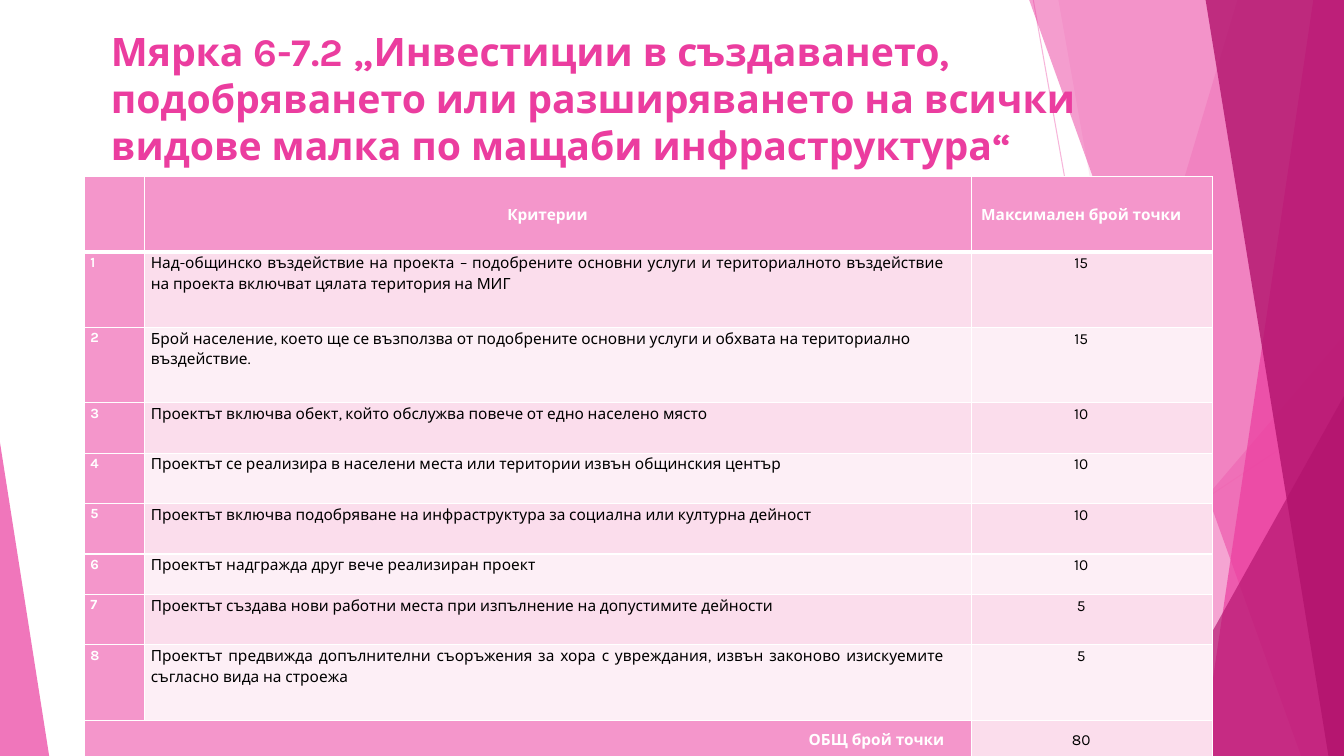
from lxml.etree import SubElement
from pptx import Presentation
from pptx.dml.color import RGBColor
from pptx.enum.shapes import MSO_CONNECTOR, MSO_SHAPE
from pptx.enum.text import MSO_ANCHOR, MSO_AUTO_SIZE, PP_ALIGN
from pptx.oxml.ns import qn
from pptx.util import Cm, Pt

WIDTH, HEIGHT = 33.87, 19.05
FONT = "Karla"
PINK, HOT_PINK, MAGENTA = "F496CB", "EB3D9F", "B2136D"
WHITE, BLACK = "FFFFFF", "000000"
BANDS = ["FBDDEC", "FDEFF6"]

TITLE = ("Мярка 6-7.2 „Инвестиции в създаването, подобряването или "
         "разширяването на всички видове малка по мащаби инфраструктура“")
HEADINGS = ["Критерии", "Максимален брой точки"]
CRITERIA = [
    ("Над-общинско въздействие на проекта – подобрените основни услуги и "
     "териториалното въздействие на проекта включват цялата територия на МИГ", 15, 1.9),
    ("Брой население, което ще се възползва от подобрените основни услуги и "
     "обхвата на териториално въздействие.", 15, 1.9),
    ("Проектът включва обект, който обслужва повече от едно населено място", 10, 1.27),
    ("Проектът се реализира в населени места или територии извън общинския център", 10, 1.27),
    ("Проектът включва подобряване на инфраструктура за социална или културна дейност", 10, 1.27),
    ("Проектът надгражда друг вече реализиран проект", 10, 1.02),
    ("Проектът създава нови работни места при изпълнение на допустимите дейности", 5, 1.27),
    ("Проектът предвижда допълнителни съоръжения за хора с увреждания, извън "
     "законово изискуемите съгласно вида на строежа", 5, 1.9),
]
COLUMN_WIDTHS = [1.52, 20.83, 6.07]
HEADER_HEIGHT, TOTAL_HEIGHT = 1.9, 0.97

RAYS = [(26.04, 0, 29.41, HEIGHT), (WIDTH, 10.24, 20.62, HEIGHT)]
BACK_FACETS = [(31.19, 25.5, PINK, 36), (26.67, 30.05, PINK, 20)]
FRONT_FACETS = [(25.93, 32.79, HOT_PINK, 50), (33.1, 30.28, HOT_PINK, 70),
                (30.38, 33.48, MAGENTA, 80)]


def apply_format(target, values):
    """Set every attribute in values on target."""
    for name, value in values.items():
        setattr(target, name, value)


def paint(fill, color, opacity=100):
    """Make a fill solid with a hex colour and an opacity in percent."""
    fill.solid()
    fill.fore_color.rgb = RGBColor.from_string(color)
    if opacity < 100:
        for tint in fill._xPr.iter(qn("a:srgbClr")):
            SubElement(tint, qn("a:alpha"), val=str(opacity * 1000))


def finish(shape, color, opacity):
    """Give a decorative shape its fill and no outline or shadow."""
    shape.shadow.inherit = False
    paint(shape.fill, color, opacity)
    shape.line.fill.background()


def add_ray(slide, x1, y1, x2, y2):
    """Draw a thin translucent background line."""
    ray = slide.shapes.add_connector(MSO_CONNECTOR.STRAIGHT, Cm(x1), Cm(y1), Cm(x2), Cm(y2))
    ray.line.width = Pt(0.75)
    paint(ray.line.fill, PINK, 70)
    SubElement(ray._element.spPr, qn("a:effectLst"))


def add_facet(slide, top_x, bottom_x, color, opacity):
    """Draw a facet that reaches from a slanted edge to the slide's right side."""
    builder = slide.shapes.build_freeform(Cm(top_x), Cm(-0.02))
    corners = [(WIDTH, -0.02), (WIDTH, HEIGHT), (bottom_x, HEIGHT)]
    builder.add_line_segments([(Cm(x), Cm(y)) for x, y in corners], close=True)
    finish(builder.convert_to_shape(), color, opacity)


def add_corner(slide, left, top, width, apex, color, opacity):
    """Draw a right-angled triangle standing on the slide's bottom edge."""
    corner = slide.shapes.add_shape(MSO_SHAPE.ISOSCELES_TRIANGLE, Cm(left), Cm(top),
                                    Cm(width), Cm(HEIGHT - top))
    corner.adjustments[0] = apex
    finish(corner, color, opacity)


def add_background(slide):
    """Draw the layered pink facets."""
    for ray in RAYS:
        add_ray(slide, *ray)
    for facet in BACK_FACETS:
        add_facet(slide, *facet)
    add_corner(slide, 24.82, 8.46, 9.05, 1, PINK, 72)
    for facet in FRONT_FACETS:
        add_facet(slide, *facet)
    add_corner(slide, 28.8, 9.98, 5.07, 1, MAGENTA, 66)
    add_corner(slide, 0, 11.15, 1.24, 0, HOT_PINK, 70)


def write(frame, text, align, size, color, bold, spacing=1.0):
    """Write one formatted paragraph into a text frame."""
    paragraph = frame.paragraphs[0]
    apply_format(paragraph, {"alignment": align, "line_spacing": spacing})
    run = paragraph.add_run()
    run.text = text
    apply_format(run.font, {"name": FONT, "size": Pt(size), "bold": bold})
    run.font.color.rgb = RGBColor.from_string(color)


def place_title(slide):
    """Position and format the title in front of the facets."""
    title = slide.shapes.title
    title.element.getparent().append(title.element)
    apply_format(title, {"left": Cm(2.54), "top": Cm(0.48),
                         "width": Cm(25.2), "height": Cm(3.96)})
    apply_format(title.text_frame, {"word_wrap": True, "auto_size": MSO_AUTO_SIZE.NONE,
                                    "vertical_anchor": MSO_ANCHOR.MIDDLE})
    write(title.text_frame, TITLE, PP_ALIGN.LEFT, 28, HOT_PINK, True)


def style_cell(cell, fill, bottom=1):
    """Fill a cell and rule its sides in white."""
    properties = cell._tc.get_or_add_tcPr()
    for side in ("lnL", "lnR", "lnT", "lnB"):
        weight = Pt(bottom if side == "lnB" else 1)
        rule = SubElement(properties, qn(f"a:{side}"), w=str(weight))
        SubElement(SubElement(rule, qn("a:solidFill")), qn("a:srgbClr"), val=WHITE)
    paint(cell.fill, fill)


def fill_cell(cell, text, align, color=BLACK, size=11, anchor=MSO_ANCHOR.TOP, right=0.68):
    """Write a cell's text, bold when it is white."""
    apply_format(cell, {"margin_left": Cm(0.15), "margin_right": Cm(right),
                        "margin_top": 0, "margin_bottom": 0, "vertical_anchor": anchor})
    write(cell.text_frame, str(text), align, size, color, color == WHITE, 1.15)


def add_criteria_table(slide):
    """Build the table of criteria and points."""
    heights = [HEADER_HEIGHT, *(height for _, _, height in CRITERIA), TOTAL_HEIGHT]
    table = slide.shapes.add_table(len(heights), len(COLUMN_WIDTHS), Cm(2.13), Cm(4.45),
                                   Cm(sum(COLUMN_WIDTHS)), Cm(sum(heights))).table
    for column, width in zip(table.columns, COLUMN_WIDTHS):
        column.width = Cm(width)
    last = len(heights) - 1
    for index, height in enumerate(heights):
        table.rows[index].height = Cm(height)
        band = BANDS[(index - 1) % 2]
        fills = [PINK] * 3 if index == 0 else [PINK, PINK if index == last else band, band]
        for column, fill in enumerate(fills):
            style_cell(table.cell(index, column), fill, 3 if index == 0 else 1)

    for column, heading in enumerate(HEADINGS, start=1):
        fill_cell(table.cell(0, column), heading, PP_ALIGN.CENTER, WHITE,
                  anchor=MSO_ANCHOR.MIDDLE)
    for number, (criterion, points, _) in enumerate(CRITERIA, start=1):
        align = PP_ALIGN.LEFT if number == 2 else PP_ALIGN.JUSTIFY
        fill_cell(table.cell(number, 0), number, PP_ALIGN.JUSTIFY, WHITE, 10, right=0.15)
        fill_cell(table.cell(number, 1), criterion, align)
        fill_cell(table.cell(number, 2), points, PP_ALIGN.CENTER)

    total_label = table.cell(last, 0)
    total_label.merge(table.cell(last, 1))
    fill_cell(total_label, "ОБЩ брой точки", PP_ALIGN.RIGHT, WHITE, anchor=MSO_ANCHOR.MIDDLE)
    total = sum(points for _, points, _ in CRITERIA)
    fill_cell(table.cell(last, 2), total, PP_ALIGN.CENTER, anchor=MSO_ANCHOR.MIDDLE)


def main():
    """Build and save the slide."""
    deck = Presentation()
    apply_format(deck, {"slide_width": Cm(WIDTH), "slide_height": Cm(HEIGHT)})
    slide = deck.slides.add_slide(deck.slide_layouts.get_by_name("Title Only"))
    add_background(slide)
    place_title(slide)
    add_criteria_table(slide)
    deck.save("out.pptx")


if __name__ == "__main__":
    main()
